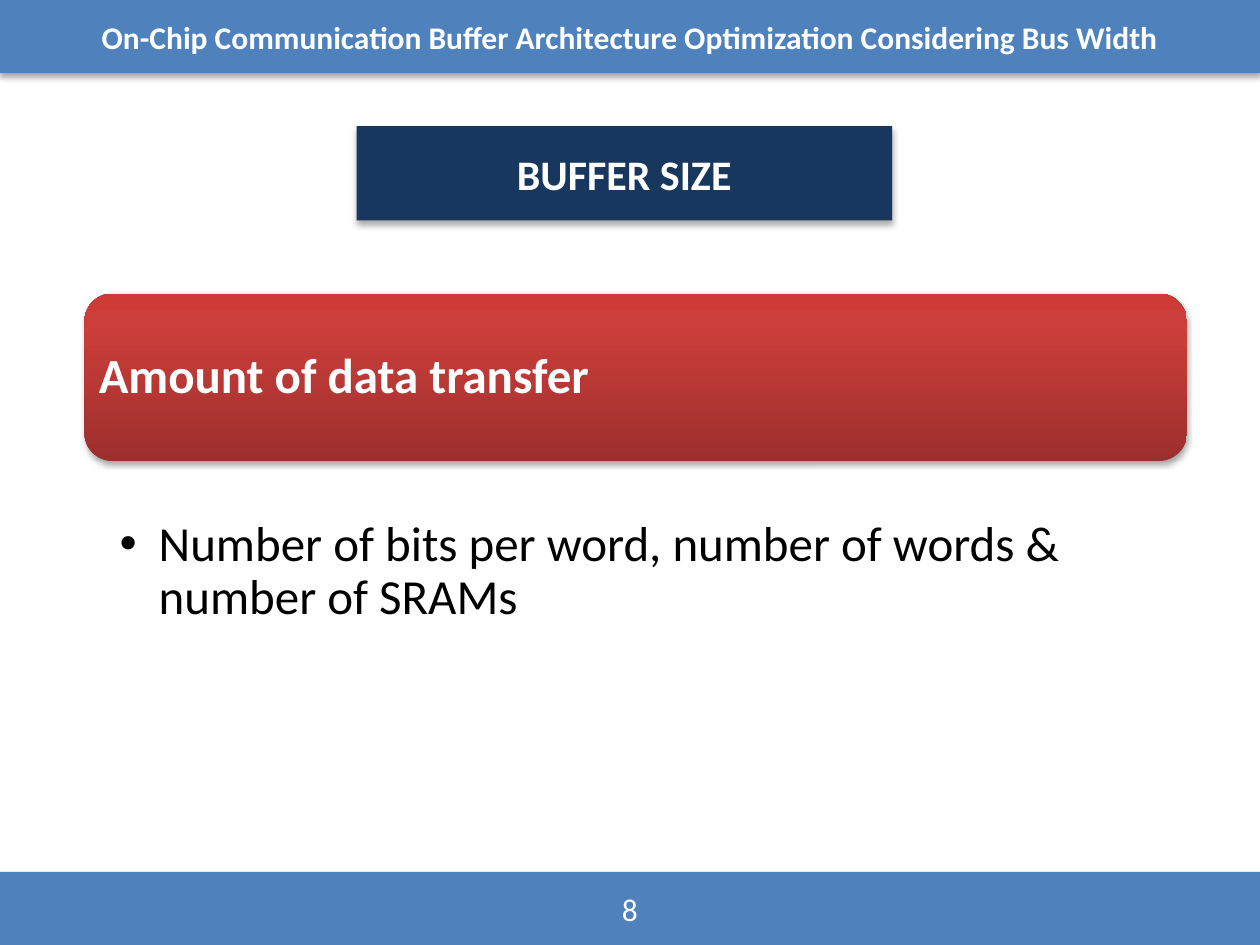
import copy

import pptx
import pptx.util
from lxml import etree
from pptx.dml.color import RGBColor
from pptx.enum.shapes import MSO_SHAPE
from pptx.enum.text import MSO_ANCHOR, PP_ALIGN
from pptx.oxml.ns import qn
from pptx.util import Inches, Pt

FONT = "Calibri"
WHITE, BLACK, BLUE, NAVY = "FFFFFF", "000000", "4F81BD", "17375E"
RED_STOPS = [(0, "9C2F2D"), (0.8, "CB3E3A"), (1, "CE3B37")]

BOXES = [
    ("8", (0, 6.92, 10, 0.58), BLUE, 18, False),
    ("On-Chip Communication Buffer Architecture Optimization Considering Bus Width",
     (0, 0, 10, 0.58), BLUE, 18, True),
    ("BUFFER SIZE", (2.83, 1, 4.25, 0.75), NAVY, 24, True),
]
HEADING = ("Amount of data transfer", (0.67, 2.33, 8.75, 1.33))
BULLET = ("Number of bits per word, number of words & number of SRAMs", (0.67, 4.08, 8.75, 1.18))


def color(value):
    return RGBColor.from_string(value)


def write(shape, text, size, bold, text_color, align, anchor, margins):
    frame = shape.text_frame
    frame.word_wrap = True
    frame.vertical_anchor = anchor
    frame.margin_left, frame.margin_top, frame.margin_right, frame.margin_bottom = map(Inches, margins)
    paragraph = frame.paragraphs[0]
    paragraph.text = text
    paragraph.alignment = align
    paragraph.font.name = FONT
    paragraph.font.size = Pt(size)
    paragraph.font.bold = bold
    paragraph.font.color.rgb = color(text_color)
    return paragraph


def add_shadow(shape, opacity, blur, distance):
    shape.shadow.inherit = False
    effects = shape._element.spPr.find(qn("a:effectLst"))
    shadow = etree.SubElement(effects, qn("a:outerShdw"), blurRad=str(Pt(blur)),
                              dist=str(Pt(distance)), dir="5400000", rotWithShape="0")
    tint = etree.SubElement(shadow, qn("a:srgbClr"), val=BLACK)
    etree.SubElement(tint, qn("a:alpha"), val=str(opacity * 1000))


def fill_gradient(shape, stops):
    shape.fill.gradient()
    shape.fill.gradient_angle = 90
    stop_list = shape._element.spPr.find(qn("a:gradFill")).find(qn("a:gsLst"))
    while len(stop_list) < len(stops):
        stop_list.append(copy.deepcopy(stop_list[0]))
    for stop, (position, value) in zip(shape.fill.gradient_stops, stops):
        stop.position = position
        stop.color.rgb = color(value)


def add_bullet(paragraph, indent):
    properties = paragraph._p.get_or_add_pPr()
    properties.set("marL", str(Inches(indent)))
    properties.set("indent", str(-Inches(indent)))
    etree.SubElement(properties, qn("a:buFont"), typeface="Arial")
    etree.SubElement(properties, qn("a:buChar"), char="•")


def main():
    presentation = pptx.Presentation()
    presentation.slide_width, presentation.slide_height = Inches(10), Inches(7.5)
    slide = presentation.slides.add_slide(presentation.slide_layouts[6])

    for text, place, fill, size, bold in BOXES:
        box = slide.shapes.add_shape(MSO_SHAPE.RECTANGLE, *map(Inches, place))
        box.fill.solid()
        box.fill.fore_color.rgb = color(fill)
        box.line.fill.background()
        add_shadow(box, 32, 3.5, 2.2)
        write(box, text, size, bold, WHITE, PP_ALIGN.CENTER, MSO_ANCHOR.MIDDLE, (0.1, 0.05, 0.1, 0.05))

    text, place = HEADING
    heading = slide.shapes.add_shape(MSO_SHAPE.ROUNDED_RECTANGLE, *map(Inches, place))
    fill_gradient(heading, RED_STOPS)
    heading.line.fill.background()
    add_shadow(heading, 35, 3.1, 1.8)
    paragraph = write(heading, text, 28, True, WHITE, PP_ALIGN.LEFT, MSO_ANCHOR.MIDDLE, (0.05,) * 4)
    paragraph.line_spacing = 0.9

    text, place = BULLET
    details = slide.shapes.add_textbox(*map(Inches, place))
    paragraph = write(details, text, 28, False, BLACK, PP_ALIGN.LEFT, MSO_ANCHOR.TOP,
                      (0.28, 0.04, 0.22, 0.04))
    paragraph.level = 1
    paragraph.line_spacing = 0.9
    add_bullet(paragraph, 0.31)

    presentation.save("out.pptx")


if __name__ == "__main__":
    main()
